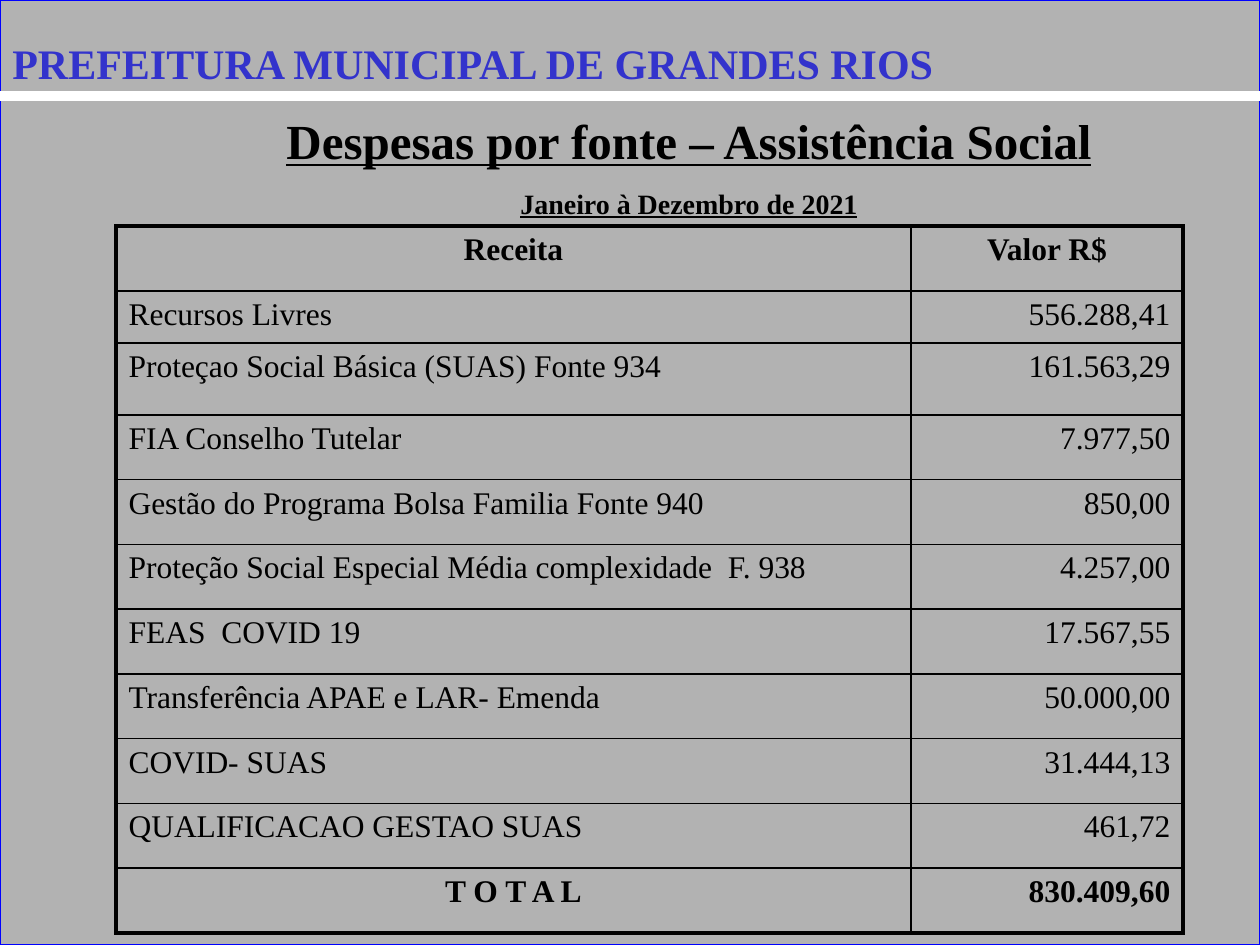
from lxml.etree import SubElement, fromstring
from pptx import Presentation
from pptx.dml.color import RGBColor
from pptx.enum.shapes import MSO_CONNECTOR, MSO_SHAPE
from pptx.enum.text import MSO_ANCHOR, MSO_AUTO_SIZE, PP_ALIGN as ALIGN
from pptx.oxml.ns import nsdecls, qn
from pptx.util import Emu, Pt

# Content
MUNICIPALITY = "PREFEITURA MUNICIPAL DE GRANDES RIOS"
HEADINGS = [("Despesas por fonte – Assistência Social", 28),
            ("Janeiro à Dezembro de 2021", 16)]
EXPENSES = [
    ("Receita", "Valor R$"),
    ("Recursos Livres", "556.288,41"),
    ("Proteçao Social Básica (SUAS) Fonte 934", "161.563,29"),
    ("FIA Conselho Tutelar", "7.977,50"),
    ("Gestão do Programa Bolsa Familia Fonte 940", "850,00"),
    ("Proteção Social Especial Média complexidade  F. 938", "4.257,00"),
    ("FEAS  COVID 19", "17.567,55"),
    ("Transferência APAE e LAR- Emenda", "50.000,00"),
    ("COVID- SUAS", "31.444,13"),
    ("QUALIFICACAO GESTAO SUAS", "461,72"),
    ("T O T A L", "830.409,60"),
]

# Style and layout, in px
FONT = "Times New Roman"
COLORS = {"ground": "B2B2B2", "frame": "0000FF", "rule": "FFFFFF",
          "text": "000000", "header": "3333CC", "shadow": "808080"}
PX = 914400 / 126
SLIDE_W, SLIDE_H = 1260, 945
HEADER_BOX = (0, 26, 1196, 63)
TITLE_BOX = (180, 69, 1018, 732)
RULE_Y = 96
TABLE_LEFT, TABLE_TOP, TABLE_H = 116, 226, 707
COLUMN_WIDTHS = [795, 272]
FIRST_ROWS = [65, 52, 72]
OUTER, INNER = 2.25, 1


def px(*lengths):
    return [Emu(round(length * PX)) for length in lengths]


def rgb(name):
    return RGBColor.from_string(COLORS[name])


def add_run(paragraph, text, size, color="text", bold=False, underline=None):
    run = paragraph.add_run()
    run.text = text
    font = run.font
    font.name, font.size, font.bold, font.underline = FONT, Pt(size), bold, underline
    font.color.rgb = rgb(color)
    return run


def set_frame(frame):
    frame.word_wrap = True
    frame.auto_size = MSO_AUTO_SIZE.NONE
    frame.vertical_anchor = MSO_ANCHOR.TOP
    frame.margin_top = px(12)[0]


def set_borders(cell, widths):
    for side, width in widths.items():
        border = SubElement(cell._tc.get_or_add_tcPr(), qn(f"a:ln{side}"), w=str(Pt(width)))
        fill = SubElement(border, qn("a:solidFill"))
        SubElement(fill, qn("a:srgbClr"), val=COLORS["text"])


prs = Presentation()
prs.slide_width, prs.slide_height = px(SLIDE_W, SLIDE_H)
slide = prs.slides.add_slide(prs.slide_layouts[5])
shapes = slide.shapes
title = shapes.title

# Framed ground, behind the title
ground = shapes.add_shape(MSO_SHAPE.RECTANGLE, *px(0, 0, SLIDE_W, SLIDE_H))
ground.shadow.inherit = False
ground.fill.solid()
ground.fill.fore_color.rgb = rgb("ground")
ground.line.color.rgb = rgb("frame")
ground.line.width = Pt(0.75)
title.element.addprevious(ground.element)

# White rule under the header
rule = shapes.add_connector(MSO_CONNECTOR.STRAIGHT, *px(0, RULE_Y, SLIDE_W, RULE_Y))
rule.line.color.rgb = rgb("rule")
rule.line.width = Pt(6)
SubElement(rule.element.spPr, qn("a:effectLst"))
title.element.addprevious(rule.element)

# Title and period
title.left, title.top, title.width, title.height = px(*TITLE_BOX)
set_frame(title.text_frame)
for index, (heading, size) in enumerate(HEADINGS):
    frame = title.text_frame
    paragraph = frame.add_paragraph() if index else frame.paragraphs[0]
    paragraph.alignment = ALIGN.CENTER
    paragraph.line_spacing = 1.5
    add_run(paragraph, heading, size, bold=True, underline=True)

# Municipality header with text shadow
header = shapes.add_textbox(*px(*HEADER_BOX))
set_frame(header.text_frame)
header_run = add_run(header.text_frame.paragraphs[0], MUNICIPALITY, 24, "header", bold=True)
shadow = fromstring(
    f'<a:effectLst {nsdecls("a")}><a:outerShdw dist="35921" dir="2700000">'
    f'<a:srgbClr val="{COLORS["shadow"]}"/></a:outerShdw></a:effectLst>')
header_run.font._element.find(qn("a:solidFill")).addnext(shadow)

# Expense table: the rows after the first ones share the remaining height
last_row, last_col = len(EXPENSES) - 1, len(COLUMN_WIDTHS) - 1
shared = (TABLE_H - sum(FIRST_ROWS)) / (len(EXPENSES) - len(FIRST_ROWS))
row_heights = FIRST_ROWS + [shared] * (len(EXPENSES) - len(FIRST_ROWS))
table = shapes.add_table(len(EXPENSES), len(COLUMN_WIDTHS),
                         *px(TABLE_LEFT, TABLE_TOP, sum(COLUMN_WIDTHS), TABLE_H)).table
table.first_row = table.horz_banding = False
for column, width in zip(table.columns, px(*COLUMN_WIDTHS)):
    column.width = width
for row, height in zip(table.rows, px(*row_heights)):
    row.height = height

for r, entry in enumerate(EXPENSES):
    emphasized = r in (0, last_row)
    for c, text in enumerate(entry):
        cell = table.cell(r, c)
        set_borders(cell, {"L": INNER if c else OUTER,
                           "R": OUTER if c == last_col else INNER,
                           "T": INNER if r else OUTER,
                           "B": OUTER if r == last_row else INNER})
        cell.fill.background()
        paragraph = cell.text_frame.paragraphs[0]
        if r == 0 or (emphasized and c == 0):
            paragraph.alignment = ALIGN.CENTER
        else:
            paragraph.alignment = ALIGN.RIGHT if c else ALIGN.LEFT
        add_run(paragraph, text, 18, bold=emphasized)

prs.save("out.pptx")
